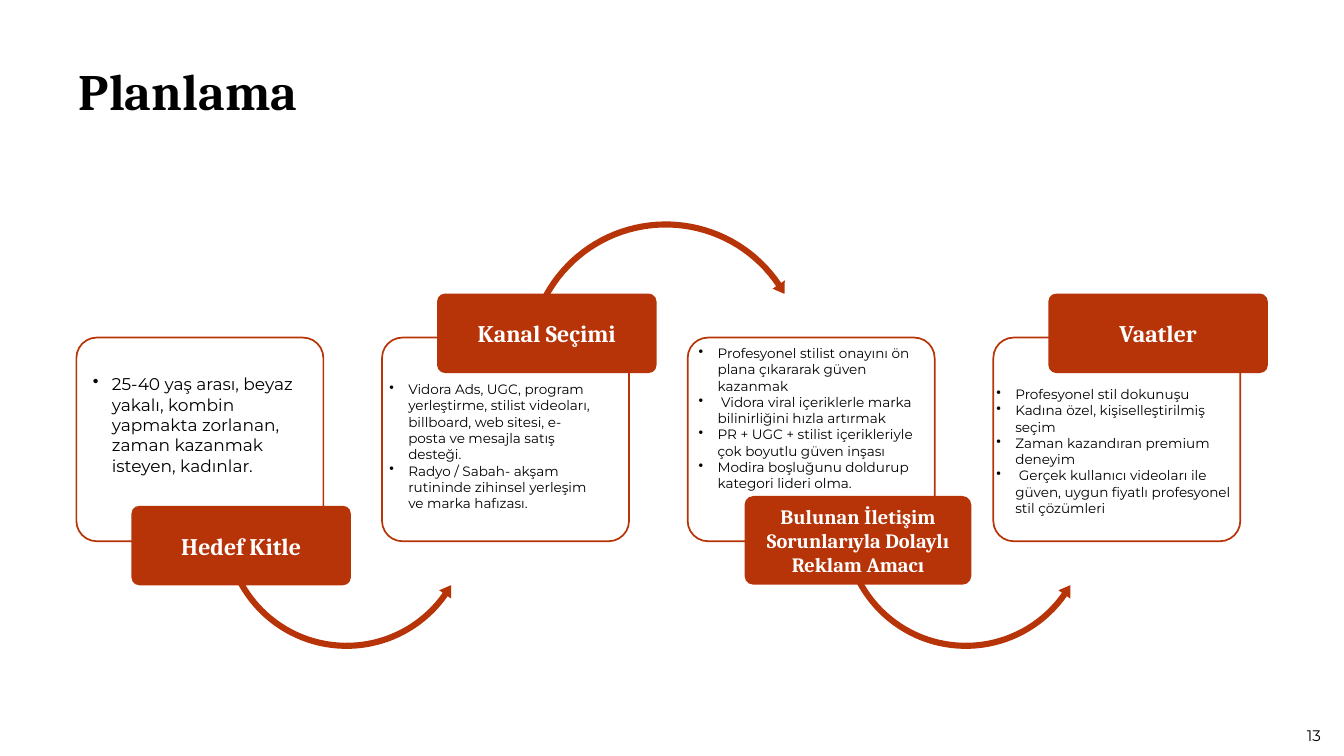
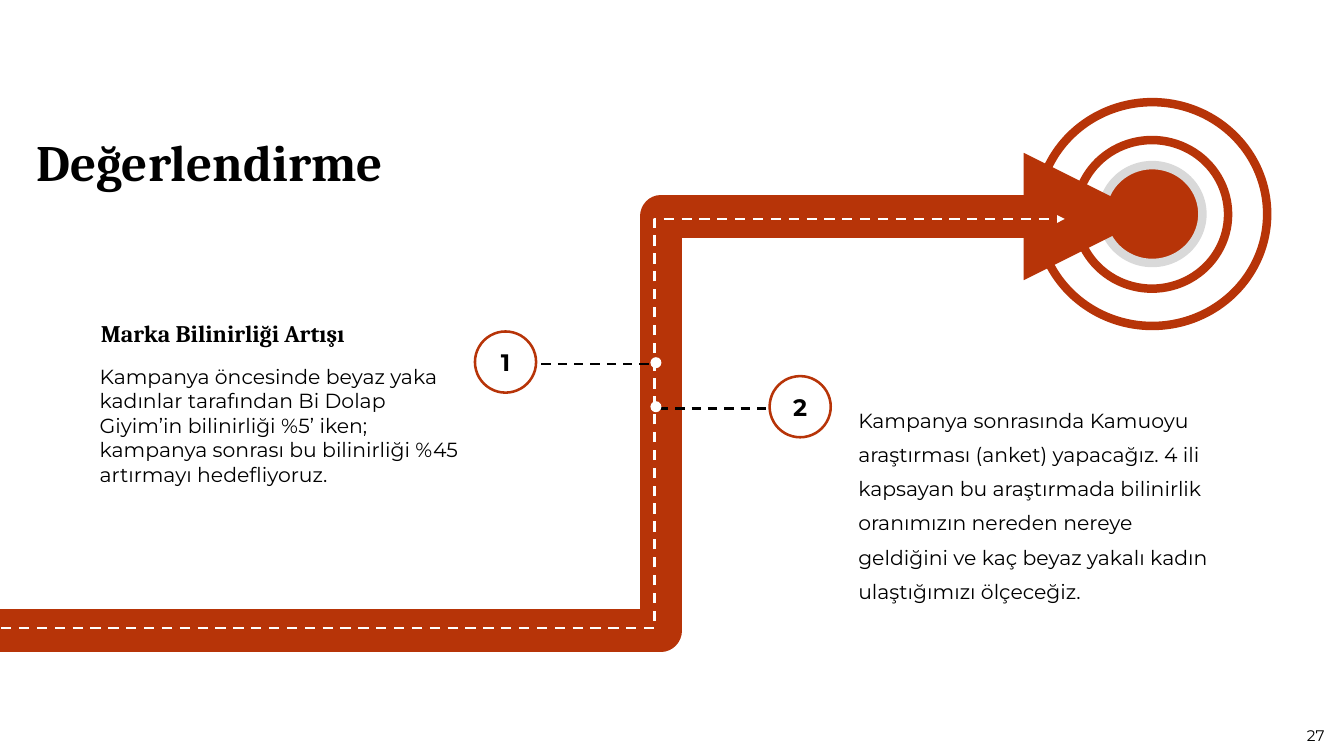
import math
from dataclasses import dataclass

import pptx
import pptx.dml.color
import pptx.enum.dml
import pptx.enum.shapes
import pptx.enum.text
import pptx.oxml
import pptx.oxml.ns
import pptx.util
from lxml import etree

PX = 9144
SHAPES = pptx.enum.shapes.MSO_SHAPE
ALIGN = pptx.enum.text.PP_ALIGN
ANCHOR = pptx.enum.text.MSO_ANCHOR
DASH = pptx.enum.dml.MSO_LINE.DASH
qn = pptx.oxml.ns.qn


@dataclass(frozen=True)
class Theme:
    accent: str = "B73408"
    ink: str = "000000"
    paper: str = "FFFFFF"
    ring: str = "D9D9D9"
    heading: str = "Cambria"
    body: str = "Montserrat"
    title: int = 60
    label: int = 28
    long_label: int = 24
    text: int = 24
    lead: int = 20
    small: int = 16
    number: int = 18


theme = Theme()


def style(shape, fill=None, line=None, width=1, dash=None):
    shape.shadow.inherit = False
    if fill:
        shape.fill.solid()
        shape.fill.fore_color.rgb = pptx.dml.color.RGBColor.from_string(fill)
    else:
        shape.fill.background()
    if line:
        shape.line.color.rgb = pptx.dml.color.RGBColor.from_string(line)
        shape.line.width = pptx.util.Pt(width)
        shape.line.dash_style = dash
    else:
        shape.line.fill.background()
    return shape


def write(shape, lines, size, font=theme.body, color=theme.ink, bold=False,
          align=ALIGN.LEFT, anchor=ANCHOR.TOP, inset=5, spacing=1.0, bullet=False):
    frame = shape.text_frame
    frame.text = "\n".join(lines)
    frame.word_wrap = True
    frame.auto_size = pptx.enum.text.MSO_AUTO_SIZE.NONE
    frame.vertical_anchor = anchor
    frame.margin_left = frame.margin_right = inset * PX
    frame.margin_top = frame.margin_bottom = inset * PX
    for paragraph in frame.paragraphs:
        if bullet:
            properties = paragraph._p.get_or_add_pPr()
            properties.set("marL", str(31 * PX))
            properties.set("indent", str(-31 * PX))
            etree.SubElement(properties, qn("a:buChar")).set("char", "•")
        paragraph.alignment = align
        paragraph.line_spacing = spacing
        for run in paragraph.runs:
            run.font.name = font
            run.font.size = pptx.util.Pt(size)
            run.font.bold = bold
            run.font.color.rgb = pptx.dml.color.RGBColor.from_string(color)


presentation = pptx.Presentation()
presentation.slide_width = pptx.util.Pt(1583)
presentation.slide_height = pptx.util.Pt(890)

slides = []
for title, box, number in [
    ("Planlama", (124, 104, 1945, 101), "13"),
    ("Değerlendirme", (55, 219, 666, 101), "27"),
]:
    slide = presentation.slides.add_slide(presentation.slide_layouts[5])
    heading = slide.shapes.title
    heading.left, heading.top, heading.width, heading.height = [v * PX for v in box]
    write(heading, [title], theme.title, theme.heading, bold=True, spacing=0.9)
    footer = slide.shapes.add_textbox(2133 * PX, 1183 * PX, 60 * PX, 40 * PX)
    write(footer, [number], theme.number)
    slides.append(slide)

planning, evaluation = slides

shapes = planning.shapes
for center_x, center_y, radius, start, end in [
    (567, 859, 197, 153, 35),
    (1089, 590, 223, 206, 326),
    (1580, 859, 197, 153, 35),
]:
    steps = 40
    angles = [math.radians(start + (end - start) * i / steps) for i in range(steps + 1)]
    tip = angles[-1] + math.copysign(18 / radius, end - start)
    outline = [(radius - 5, angle) for angle in angles]
    outline += [(radius - 12, angles[-1]), (radius, tip), (radius + 12, angles[-1])]
    outline += [(radius + 5, angle) for angle in reversed(angles)]
    points = [((center_x + r * math.cos(a)) * PX, (center_y + r * math.sin(a)) * PX)
              for r, a in outline]
    builder = shapes.build_freeform(*points[0])
    builder.add_line_segments(points[1:])
    style(builder.convert_to_shape(), theme.accent)

cards = [
    ("Hedef Kitle", theme.label, (215, 827, 359, 130), theme.lead, (147, 606, 382, 178), [
        "25-40 yaş arası, beyaz yakalı, kombin yapmakta zorlanan, zaman kazanmak isteyen, kadınlar.",
    ]),
    ("Kanal Seçimi", theme.label, (715, 480, 359, 130), theme.small, (632, 618, 343, 226), [
        "Vidora Ads, UGC, program yerleştirme, stilist videoları, billboard, web sitesi, "
        "e-posta ve mesajla satış desteği.",
        "Radyo / Sabah- akşam rutininde zihinsel yerleşim ve marka hafızası.",
    ]),
    ("Bulunan İletişim Sorunlarıyla Dolaylı Reklam Amacı", theme.long_label,
     (1218, 811, 371, 145), theme.small, (1138, 559, 391, 279), [
        "Profesyonel stilist onayını ön plana çıkararak güven kazanmak",
        " Vidora viral içeriklerle marka bilinirliğini hızla artırmak",
        "PR + UGC + stilist içerikleriyle çok boyutlu güven inşası",
        "Modira boşluğunu doldurup kategori lideri olma.",
    ]),
    ("Vaatler", theme.label, (1715, 480, 359, 130), theme.small, (1625, 626, 409, 226), [
        "Profesyonel stil dokunuşu",
        "Kadına özel, kişiselleştirilmiş seçim",
        "Zaman kazandıran premium deneyim",
        " Gerçek kullanıcı videoları ile güven, uygun fiyatlı profesyonel stil çözümleri",
    ]),
]
for index, (label, label_size, tab_box, text_size, text_box, lines) in enumerate(cards):
    card_box = (125 + 500 * index, 552, 404, 333)
    card = shapes.add_shape(SHAPES.ROUNDED_RECTANGLE, *[v * PX for v in card_box])
    card.adjustments[0] = 0.1
    style(card, theme.paper, theme.accent, 2)
    tab = shapes.add_shape(SHAPES.ROUNDED_RECTANGLE, *[v * PX for v in tab_box])
    tab.adjustments[0] = 0.1
    style(tab, theme.accent)
    write(tab, [label], label_size, theme.heading, theme.paper, True,
          ALIGN.CENTER, ANCHOR.MIDDLE, 0)
    body = shapes.add_textbox(*[v * PX for v in text_box])
    write(body, lines, text_size, bullet=True)

shapes = evaluation.shapes
for box, fill, line in [
    ((1697, 167, 376, 366), None, theme.accent),
    ((1760, 229, 249, 243), None, theme.accent),
    ((1803, 270, 164, 160), theme.accent, theme.ring),
]:
    target = shapes.add_shape(SHAPES.OVAL, *[v * PX for v in box])
    style(target, fill, line, 10)

for points, color, width, dash in [
    ([(0, 1031), (1081, 1031), (1081, 354), (1883, 354)], theme.accent, 50, None),
    ([(2, 1027), (1071, 1027), (1071, 358), (1742, 358)], theme.paper, 3, DASH),
]:
    builder = shapes.build_freeform(*points[0], scale=PX)
    builder.add_line_segments(points[1:], close=False)
    road = style(builder.convert_to_shape(), None, color, width, dash)
    outline = road.line._get_or_add_ln()
    etree.SubElement(outline, qn("a:round"))
    etree.SubElement(outline, qn("a:tailEnd")).set("type", "triangle")

for number, start, end, y, circle_left, circle_top, dot_top in [
    ("1", 859, 1080, 595, 777, 542, 584),
    ("2", 1078, 1303, 668, 1259, 615, 656),
]:
    connector = shapes.add_connector(pptx.enum.shapes.MSO_CONNECTOR.STRAIGHT,
                                     start * PX, y * PX, end * PX, y * PX)
    connector.line.color.rgb = pptx.dml.color.RGBColor.from_string(theme.ink)
    connector.line.width = pptx.util.Pt(2.75)
    connector.line.dash_style = DASH
    etree.SubElement(connector._element.spPr, qn("a:effectLst"))
    circle = shapes.add_shape(SHAPES.OVAL, circle_left * PX, circle_top * PX, 100 * PX, 100 * PX)
    style(circle, theme.paper, theme.accent, 3)
    write(circle, [number], theme.label, bold=True, align=ALIGN.CENTER,
          anchor=ANCHOR.MIDDLE, inset=0)
    dot = shapes.add_shape(SHAPES.OVAL, 1064 * PX, dot_top * PX, 18 * PX, 18 * PX)
    style(dot, theme.paper)

for box, line, size, font, bold, spacing in [
    ((160, 517, 456, 57), "Marka Bilinirliği Artışı", theme.label, theme.heading, True, 1.0),
    ((158, 590, 605, 212),
     "Kampanya öncesinde beyaz yaka kadınlar tarafından Bi Dolap Giyim’in bilinirliği %5’ iken; "
     "kampanya sonrası bu bilinirliği %45 artırmayı hedefliyoruz.",
     theme.text, theme.body, False, 1.0),
    ((1399, 646, 592, 344),
     "Kampanya sonrasında Kamuoyu araştırması (anket) yapacağız. 4 ili kapsayan bu araştırmada "
     "bilinirlik oranımızın nereden nereye geldiğini ve kaç beyaz yakalı kadın ulaştığımızı ölçeceğiz.",
     theme.text, theme.body, False, 1.4),
]:
    note = shapes.add_textbox(*[v * PX for v in box])
    write(note, [line], size, font, bold=bold, spacing=spacing)

presentation.save("out.pptx")
